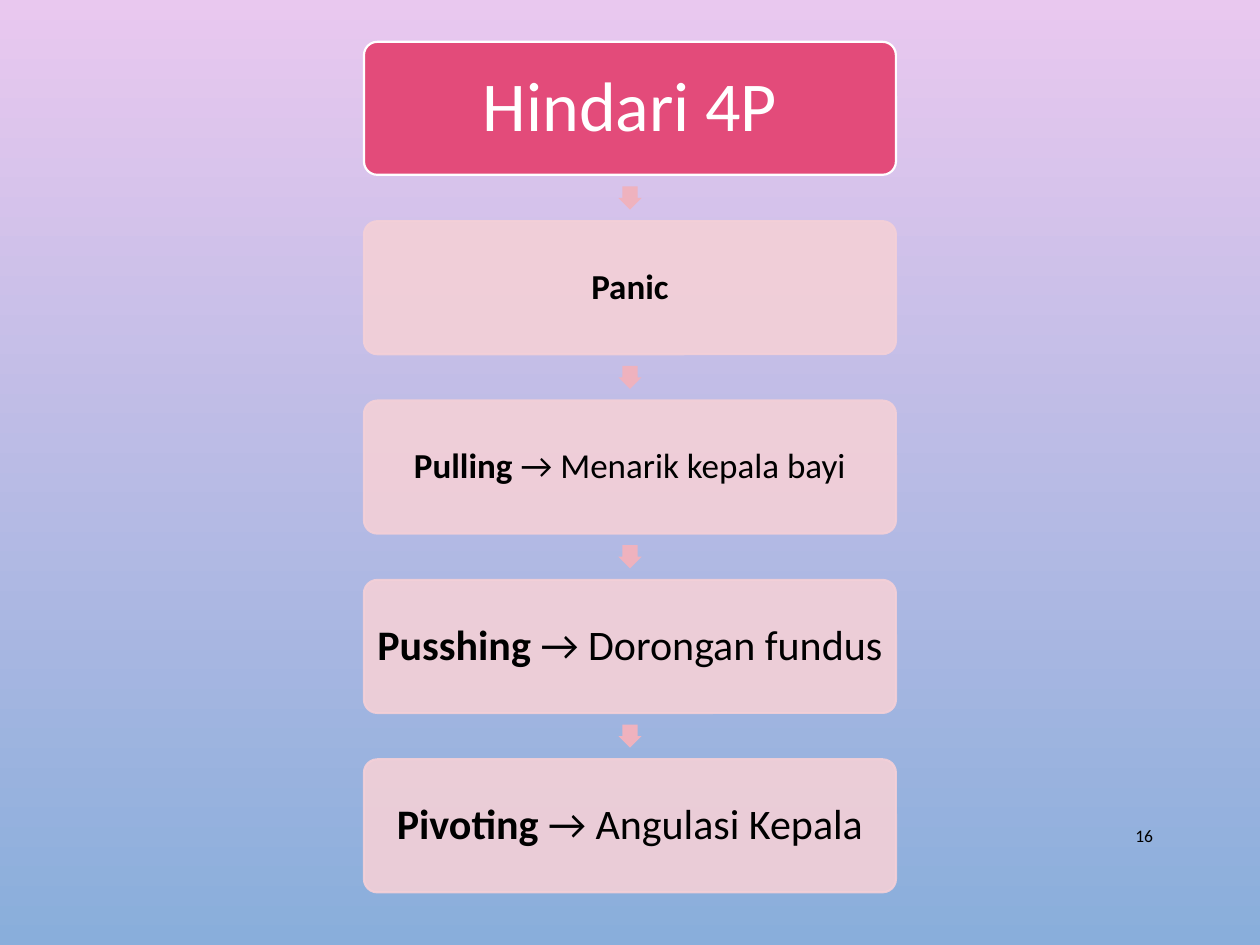
from dataclasses import dataclass

from lxml import etree
from pptx import Presentation
from pptx.dml.color import RGBColor
from pptx.enum import shapes, text
from pptx.oxml.ns import qn
from pptx.util import Pt


@dataclass(frozen=True)
class Theme:
    font: str = "Calibri"
    black: str = "000000"
    white: str = "FFFFFF"
    rose: str = "E34B7A"
    blush: str = "F4D0D7"
    pink: str = "EFB2BE"
    sky: tuple = ("E9C8EF", "89AEDB")
    head: int = 40
    large: int = 24
    mid: int = 20
    small: int = 10


def write(frame, parts, size, color, font, align=text.PP_ALIGN.CENTER, inset=None, space=None):
    frame.word_wrap = True
    frame.auto_size = text.MSO_AUTO_SIZE.NONE
    frame.vertical_anchor = text.MSO_ANCHOR.MIDDLE
    if inset is not None:
        frame.margin_left = frame.margin_right = Pt(inset)
        frame.margin_top = frame.margin_bottom = Pt(inset)
    para = frame.paragraphs[0]
    para.alignment = align
    para.line_spacing = space
    for words, bold in parts:
        run = para.add_run()
        run.text = words
        run.font.name = font
        run.font.size = Pt(size)
        run.font.bold = bold
        run.font.color.rgb = RGBColor.from_string(color)


def fade(fill, alpha):
    color = fill._xPr.find(qn("a:solidFill"))[0]
    etree.SubElement(color, qn("a:alpha")).set("val", str(alpha * 1000))


class Deck:
    def __init__(self, slide, theme):
        self.slide = slide
        self.theme = theme

    def sky(self):
        fill = self.slide.background.fill
        fill.gradient()
        fill.gradient_angle = 270
        for stop, color, place in zip(fill.gradient_stops, self.theme.sky, (0, 1)):
            stop.color.rgb = RGBColor.from_string(color)
            stop.position = place

    def shape(self, kind, box, fill):
        item = self.slide.shapes.add_shape(kind, *map(Pt, box))
        item.shadow.inherit = False
        item.fill.solid()
        item.fill.fore_color.rgb = RGBColor.from_string(fill)
        item.line.fill.background()
        return item

    def card(self, box, fill, edge, alpha=None):
        item = self.shape(shapes.MSO_SHAPE.ROUNDED_RECTANGLE, box, fill)
        item.adjustments[0] = 0.1
        item.line.color.rgb = RGBColor.from_string(edge)
        item.line.width = Pt(1.25)
        if alpha:
            fade(item.fill, alpha)
            fade(item.line.fill, alpha)
        return item

    def title(self, words, box):
        left, top, width, height = box
        self.card(box, self.theme.rose, self.theme.white)
        item = self.slide.shapes.title
        pad = 2.2
        item.left, item.top = Pt(left + pad), Pt(top + pad)
        item.width, item.height = Pt(width - 2 * pad), Pt(height - 2 * pad)
        self.slide.shapes._spTree.append(item._element)
        write(item.text_frame, [(words, False)], self.theme.head, self.theme.white,
              self.theme.font, inset=4.2, space=0.9)

    def step(self, parts, size, box):
        item = self.card(box, self.theme.blush, self.theme.blush, alpha=90)
        write(item.text_frame, parts, size, self.theme.black, self.theme.font,
              inset=2.1, space=0.9)

    def arrow(self, mid_x, mid_y, side=13.2):
        box = (mid_x - side / 2, mid_y - side / 2, side, side)
        item = self.shape(shapes.MSO_SHAPE.RIGHT_ARROW, box, self.theme.pink)
        item.adjustments[0] = 0.667
        item.adjustments[1] = 0.5
        item.rotation = 90

    def number(self, words, box):
        item = self.slide.shapes.add_textbox(*map(Pt, box))
        write(item.text_frame, [(words, False)], self.theme.small, self.theme.black,
              self.theme.font, align=text.PP_ALIGN.RIGHT)


def main():
    theme = Theme()
    show = Presentation()
    show.slide_width, show.slide_height = Pt(720), Pt(540)
    deck = Deck(show.slides.add_slide(show.slide_layouts[5]), theme)

    wide, high, top, pitch = 304, 76, 23.9, 102.5
    left = (720 - wide) / 2
    steps = [
        ([("Panic", True)], theme.mid),
        ([("Pulling ", True), ("→ Menarik kepala bayi", False)], theme.mid),
        ([("Pusshing ", True), ("→ Dorongan fundus", False)], theme.large),
        ([("Pivoting ", True), ("→ Angulasi Kepala", False)], theme.large),
    ]

    deck.sky()
    deck.number("16", (620.6, 463, 45.4, 28.8))
    deck.title("Hindari 4P", (left, top, wide, high))
    for row, (parts, size) in enumerate(steps, 1):
        y = top + row * pitch
        deck.arrow(360, y - (pitch - high) / 2)
        deck.step(parts, size, (left, y, wide, high))

    show.save("out.pptx")


if __name__ == "__main__":
    main()
